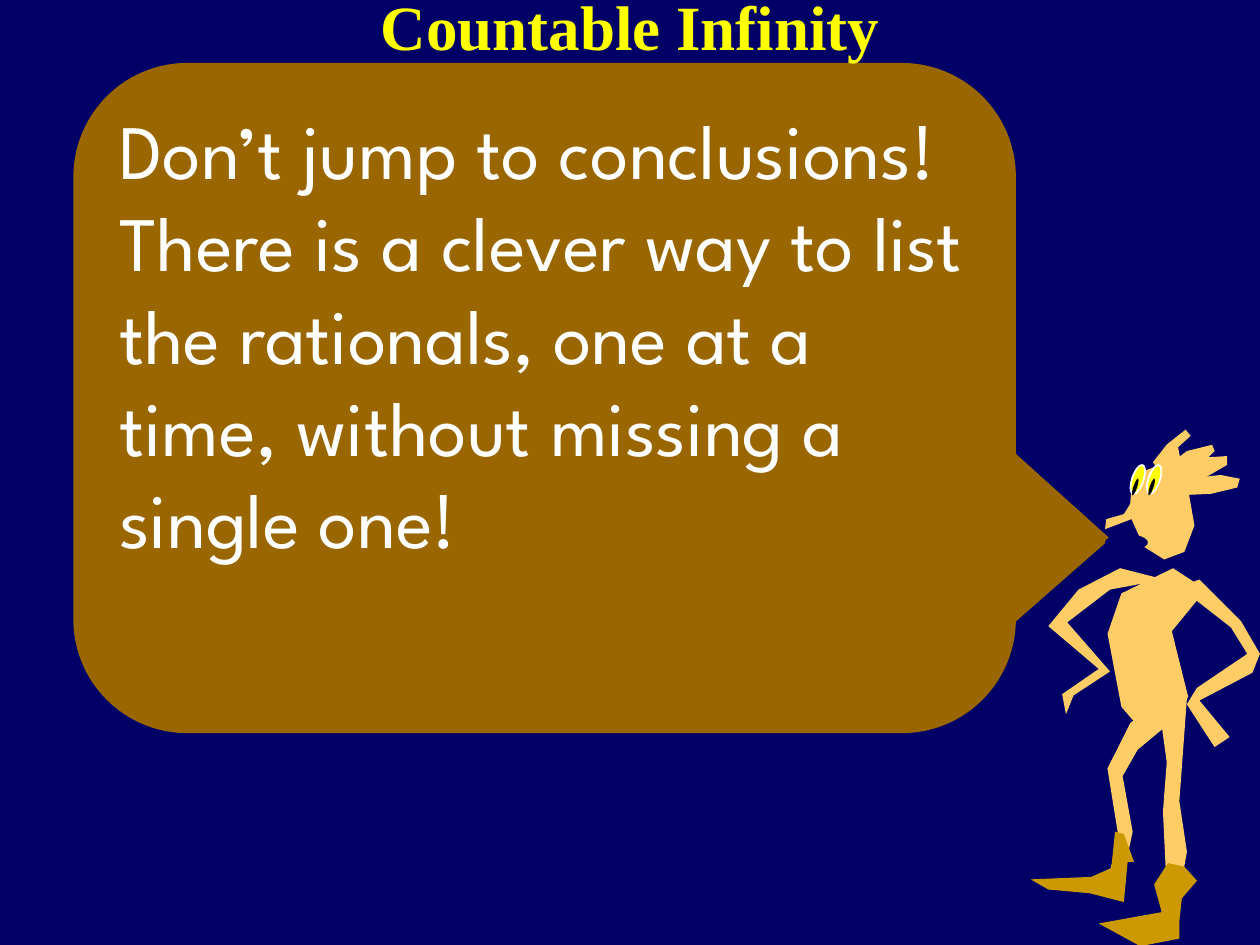
import pptx
import pptx.dml.color
import pptx.enum.shapes
import pptx.enum.text
import pptx.util

Cm = pptx.util.Cm
Shape = pptx.enum.shapes.MSO_SHAPE
COLORS = {
    "night": "000066", "bubble": "996600", "skin": "FFCC66", "boot": "CC9900",
    "eye": "FFFF00", "pupil": "000000", "white": "FFFFFF", "title": "FFFF00",
}
UNIT = Cm(0.0254)

SKIN_OUTLINES = {
    "torso": [(79, 203), (90, 171), (131, 151), (157, 168), (130, 201), (143, 253),
              (130, 277), (108, 282), (90, 261)],
    "right arm": [(136, 166), (152, 160), (185, 193), (200, 219), (194, 234), (152, 256),
                  (176, 285), (164, 293), (142, 259), (150, 246), (190, 219), (177, 198)],
    "left arm": [(89, 151), (124, 160), (81, 168), (47, 194), (81, 233), (52, 252),
                 (46, 267), (43, 251), (72, 231), (32, 197), (56, 168)],
    "right leg": [(119, 254), (142, 254), (136, 336), (142, 376), (134, 421), (95, 444),
                  (84, 435), (127, 429), (123, 344), (126, 305)],
    "left leg": [(79, 310), (97, 274), (119, 256), (139, 265), (103, 295), (91, 316),
                 (99, 360), (91, 398), (73, 408), (25, 399), (79, 398), (88, 366)],
    "head": [(97, 100), (99, 77), (121, 69), (142, 83), (148, 117), (140, 138), (124, 144),
             (108, 134), (98, 112), (77, 120), (78, 112), (92, 108)],
    "low hair": [(138, 93), (142, 80), (169, 77), (184, 80), (182, 87), (161, 92)],
    "middle hair": [(136, 88), (133, 73), (158, 63), (174, 62), (174, 69), (155, 80)],
    "high hair": [(132, 84), (125, 71), (142, 58), (162, 53), (164, 58), (148, 74)],
    "top hair": [(126, 81), (115, 67), (126, 53), (141, 41), (145, 46), (135, 55), (137, 65)],
}
BOOT_OUTLINES = {
    "right boot": [(116, 402), (127, 385), (140, 388), (150, 399), (138, 413), (136, 431),
                   (136, 445), (105, 451), (72, 433), (122, 424)],
    "left boot": [(85, 360), (92, 362), (100, 384), (95, 384), (92, 416), (65, 409),
                  (32, 406), (18, 398), (66, 396), (82, 389)],
}


def rgb(name):
    """Return the named palette colour."""
    return pptx.dml.color.RGBColor.from_string(COLORS[name])


def paint(shape, fill, line=None):
    """Give a shape a flat fill and an optional thin outline."""
    shape.shadow.inherit = False
    shape.fill.solid()
    shape.fill.fore_color.rgb = rgb(fill)
    if line:
        shape.line.color.rgb = rgb(line)
        shape.line.width = pptx.util.Pt(1)
    else:
        shape.line.fill.background()


def add_words(paragraph, words, font, size, color, align, bold=False):
    """Add one formatted run to a paragraph."""
    paragraph.alignment = align
    run = paragraph.add_run()
    run.text = words
    run.font.name = font
    run.font.size = pptx.util.Pt(size)
    run.font.bold = bold
    run.font.color.rgb = rgb(color)


def place_title(slide, left, top, width, height):
    """Place the title placeholder in front of the other parts."""
    title = slide.shapes.title
    title.left, title.top, title.width, title.height = left, top, width, height
    title.text_frame.vertical_anchor = pptx.enum.text.MSO_ANCHOR.MIDDLE
    add_words(title.text_frame.paragraphs[0], "Countable Infinity", "Times New Roman",
              36, "title", pptx.enum.text.PP_ALIGN.CENTER, True)
    slide.shapes.element.append(title.element)


def place_bubble(slide, left, top, width, height):
    """Place the speech bubble with its two paragraphs."""
    bubble = slide.shapes.add_shape(
        Shape.ROUNDED_RECTANGULAR_CALLOUT, left, top, width, height)
    for index, value in enumerate((0.6, 0.21, 0.17)):
        bubble.adjustments[index] = value
    paint(bubble, "bubble")
    speech = bubble.text_frame
    speech.word_wrap = True
    speech.vertical_anchor = pptx.enum.text.MSO_ANCHOR.TOP
    sentences = (
        "Don’t jump to conclusions!",
        "There is a clever way to list the rationals, one at a time, "
        "without missing a single one!",
    )
    for index, sentence in enumerate(sentences):
        paragraph = speech.add_paragraph() if index else speech.paragraphs[0]
        add_words(paragraph, sentence, "League Spartan", 44, "white",
                  pptx.enum.text.PP_ALIGN.LEFT)


def place_speaker(slide, left, top):
    """Place the cartoon speaker, drawn in units from the box corner."""
    speaker = slide.shapes.add_group_shape().shapes

    def add_outlines(outlines, fill):
        """Draw closed outlines in one colour."""
        for points in outlines.values():
            builder = speaker.build_freeform(*points[0], scale=UNIT)
            builder.add_line_segments(points[1:], close=True)
            paint(builder.convert_to_shape(left, top), fill)

    def add_oval(x, y, width, height, fill, line=None, turn=0):
        """Draw an oval given in units."""
        oval = speaker.add_shape(Shape.OVAL, left + x * UNIT, top + y * UNIT,
                                 width * UNIT, height * UNIT)
        oval.rotation = turn
        paint(oval, fill, line)

    add_outlines(SKIN_OUTLINES, "skin")
    for eye_x in (91, 104):
        add_oval(eye_x, 76, 24, 9, "eye", "white", 288.6)
        add_oval(eye_x + 3, 85, 14, 3, "pupil", turn=288.6)
    add_oval(77, 124, 34, 13, "night")
    add_outlines(BOOT_OUTLINES, "boot")


def main():
    """Build and save the slide."""
    deck = pptx.Presentation()
    deck.slide_width, deck.slide_height = Cm(25.4), Cm(19.05)
    slide = deck.slides.add_slide(deck.slide_layouts[5])
    slide.background.fill.solid()
    slide.background.fill.fore_color.rgb = rgb("night")
    place_bubble(slide, Cm(1.48), Cm(1.27), Cm(19), Cm(13.51))
    place_speaker(slide, Cm(20.32), Cm(7.62))
    place_title(slide, Cm(1.9), Cm(-1.07), Cm(21.6), Cm(3.18))
    deck.save("out.pptx")


if __name__ == "__main__":
    main()
